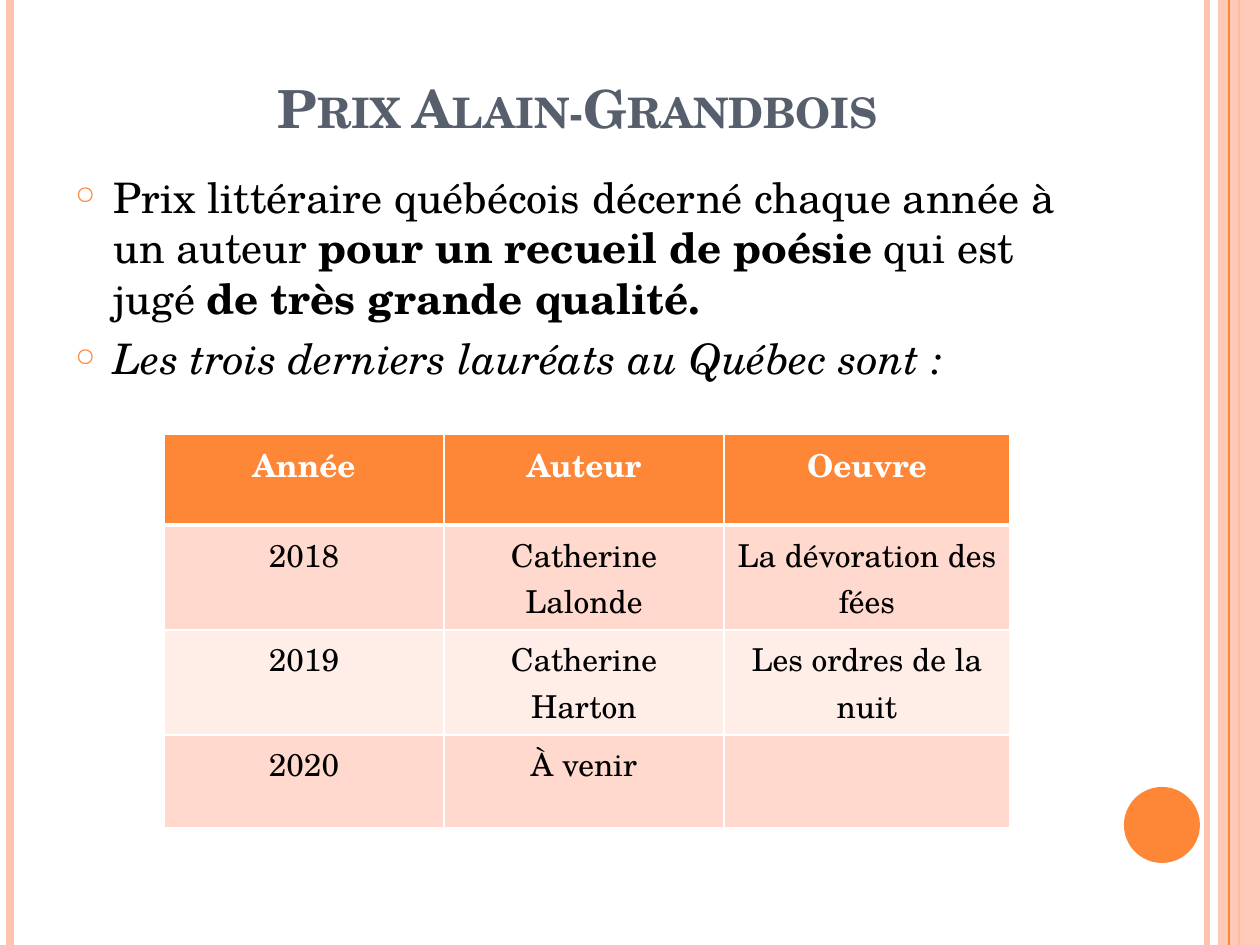
from lxml import etree
from pptx import Presentation
from pptx.dml.color import RGBColor
from pptx.enum.shapes import MSO_CONNECTOR, MSO_SHAPE
from pptx.enum.text import MSO_ANCHOR, PP_ALIGN
from pptx.oxml.ns import qn
from pptx.util import Emu, Pt

STRAIGHT = MSO_CONNECTOR.STRAIGHT
RECTANGLE, OVAL = MSO_SHAPE.RECTANGLE, MSO_SHAPE.OVAL
CENTER, LEFT = PP_ALIGN.CENTER, PP_ALIGN.LEFT
BOTTOM = MSO_ANCHOR.BOTTOM

ORANGE = RGBColor(0xFE, 0x86, 0x37)
PEACH = RGBColor(0xFE, 0xC3, 0xAE)
BAND_DARK = RGBColor(0xFF, 0xD9, 0xCE)
BAND_LIGHT = RGBColor(0xFF, 0xED, 0xE8)
SLATE = RGBColor(0x57, 0x5F, 0x6D)
BLACK = RGBColor(0, 0, 0)
WHITE = RGBColor(0xFF, 0xFF, 0xFF)

FONT = "TeX Gyre Schola"
PX = 914400 / 126


def px(length):
    return Emu(round(length * PX))


def write_text(paragraph, text, size=18, color=BLACK, bold=False, italic=False,
               align=LEFT, small_caps=False):
    paragraph.alignment = align
    run = paragraph.add_run()
    run.text = text
    run.font.name = FONT
    run.font.size = Pt(size)
    run.font.color.rgb = color
    run.font.bold = bold
    run.font.italic = italic
    if small_caps:
        run.font._element.set("cap", "small")


presentation = Presentation()
presentation.slide_width, presentation.slide_height = px(1260), px(945)
slide = presentation.slides.add_slide(presentation.slide_layouts[6])
shapes = slide.shapes

# Vertical rules, with the translucent side band over the wide orange one
for x, color, width in (
    (1207, PEACH, 3), (10, PEACH, 4.5), (1239, ORANGE, 1.5), (1229, ORANGE, 0.75),
):
    rule = shapes.add_connector(STRAIGHT, px(x), 0, px(x), px(945))
    rule.line.color.rgb = color
    rule.line.width = Pt(width)
    etree.SubElement(rule._element.spPr, qn("a:effectLst"))
    if x == 1239:
        band = shapes.add_shape(RECTANGLE, px(1218), 0, px(42), px(945))
        band.shadow.inherit = False
        band.fill.solid()
        band.fill.fore_color.rgb = PEACH
        band.line.fill.background()
        band_color = band._element.spPr.find(".//" + qn("a:srgbClr"))
        etree.SubElement(band_color, qn("a:alpha"), val="87000")

# Disc
disc = shapes.add_shape(OVAL, px(1124), px(787), px(76), px(76))
disc.shadow.inherit = False
disc.fill.solid()
disc.fill.fore_color.rgb = ORANGE
disc.line.fill.background()

# Title
title = shapes.add_textbox(px(63), px(38), px(1029), px(107)).text_frame
title.word_wrap = True
title.vertical_anchor = BOTTOM
write_text(title.paragraphs[0], "Prix Alain-Grandbois", size=30, color=SLATE,
           bold=True, align=CENTER, small_caps=True)

# Bulleted text
body = shapes.add_textbox(px(63), px(165), px(1029), px(727)).text_frame
body.word_wrap = True
bullets = (
    (("Prix littéraire québécois décerné chaque année à un auteur ", {}),
     ("pour un recueil de poésie", {"bold": True}),
     (" qui est jugé ", {}),
     ("de très grande qualité.", {"bold": True})),
    (("Les trois derniers lauréats au Québec sont :", {"italic": True}),),
)
for index, runs in enumerate(bullets):
    paragraph = body.add_paragraph() if index else body.paragraphs[0]
    paragraph.space_before = Pt(6)
    for text, style in runs:
        write_text(paragraph, text, size=24, **style)
    properties = paragraph._p.get_or_add_pPr()
    properties.set("marL", str(px(38)))
    properties.set("indent", str(px(-38)))
    bullet_color = etree.SubElement(properties, qn("a:buClr"))
    etree.SubElement(bullet_color, qn("a:srgbClr"), val=str(ORANGE))
    etree.SubElement(properties, qn("a:buSzPct"), val="60000")
    etree.SubElement(properties, qn("a:buChar"), char="○")

# Table of laureates
rows = (
    ("Année", "Auteur", "Oeuvre"),
    ("2018", "Catherine Lalonde", "La dévoration des fées"),
    ("2019", "Catherine Harton", "Les ordres de la nuit"),
    ("2020", "À venir", ""),
)
column_widths = (280, 280, 286)
row_heights = (91, 105, 105, 93)
table = shapes.add_table(len(rows), len(column_widths), px(164), px(434),
                         px(sum(column_widths)), px(sum(row_heights))).table
for column, width in zip(table.columns, column_widths):
    column.width = px(width)
for row, height in zip(table.rows, row_heights):
    row.height = px(height)

for row_index, row in enumerate(rows):
    header = row_index == 0
    row_color = ORANGE if header else BAND_DARK if row_index % 2 else BAND_LIGHT
    for column_index, text in enumerate(row):
        cell = table.cell(row_index, column_index)
        cell.fill.solid()
        cell.fill.fore_color.rgb = row_color
        if text:
            write_text(cell.text_frame.paragraphs[0], text, bold=header,
                       color=WHITE if header else BLACK, align=CENTER)
        # White borders, thicker between header and body
        cell_properties = cell._tc.get_or_add_tcPr()
        for position, side in enumerate(("lnL", "lnR", "lnT", "lnB")):
            thick = (row_index, side) in ((0, "lnB"), (1, "lnT"))
            border = etree.Element(qn("a:" + side), w=str(Pt(3 if thick else 1)))
            border_fill = etree.SubElement(border, qn("a:solidFill"))
            etree.SubElement(border_fill, qn("a:srgbClr"), val=str(WHITE))
            cell_properties.insert(position, border)

presentation.save("out.pptx")
